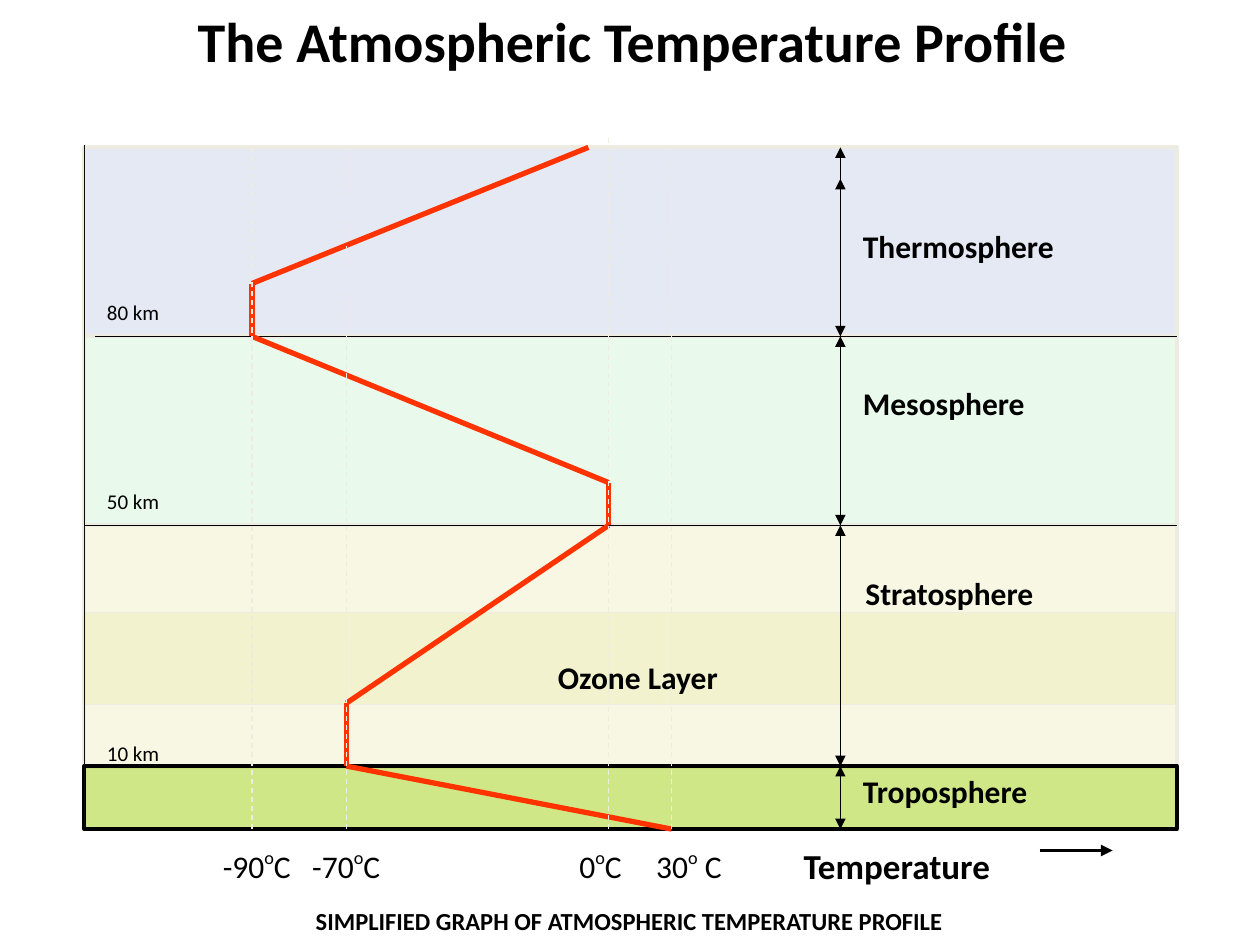
from itertools import pairwise

from lxml.etree import SubElement
from pptx import Presentation
from pptx.dml.color import RGBColor
from pptx.enum.dml import MSO_LINE
from pptx.enum.shapes import MSO_CONNECTOR, MSO_SHAPE
from pptx.enum.text import MSO_ANCHOR, PP_ALIGN
from pptx.oxml.ns import qn
from pptx.util import Inches, Pt

COLORS = {
    "black": "000000", "axis": "0D0D0D", "pale": "EEECE1", "red": "FF3300",
    "blue": "BBC7E3", "yellow": "D8D866", "mint": "B2ECB9", "green": "99CC00",
}
LEFT, RIGHT, TOP, GROUND = 0.67, 9.34, 1.17, 6.58
ARROW_X = 6.67
BOUNDARIES = [TOP, 2.67, 4.17, 6.08, GROUND]
BANDS = [
    (1.17, 1.5, "blue", 38, "pale", 2.25),
    (4.17, 1.92, "yellow", 18, "pale", 2.25),
    (2.67, 1.5, "mint", 28, "pale", 2.25),
    (6.08, 0.5, "green", 47, "black", 2.25),
    (4.86, 0.73, "yellow", 16, "pale", 0.75),
]
PROFILE = [(5.33, 6.58), (2.75, 6.08), (2.75, 5.58), (4.83, 4.17),
           (4.83, 3.83), (2, 2.67), (2, 2.25), (4.67, 1.17)]
GUIDES = [(2, TOP), (2.75, TOP), (4.83, 1.08), (5.33, TOP)]
LABELS = [
    ("Troposphere", 6.75, 6.08, 2.08),
    ("Stratosphere", 6.77, 4.51, 2.17),
    ("Mesosphere", 6.75, 3, 1.75),
    ("Thermosphere", 6.75, 1.75, 2.08),
    ("Ozone Layer", 4.33, 5.17, 2.33),
]
ALTITUDES = [("10 km", 5.83), ("50 km", 3.83), ("80 km", 2.33)]
TEMPERATURES = [("-90", "C", 1), ("-70", "C", 1.71), ("0", "C", 3.83), ("30", " C", 4.44)]


def rgb(name):
    """Return the named colour."""
    return RGBColor.from_string(COLORS[name])


def set_font(p, size, bold):
    """Format a whole paragraph."""
    p.font.name = "Calibri"
    p.font.size = Pt(size)
    p.font.bold = bold
    p.font.color.rgb = rgb("black")


def add_title(s, text):
    """Place and format the title placeholder."""
    sp = s.shapes.title
    sp.left, sp.top, sp.width, sp.height = map(Inches, (0.52, -0.02, 9, 0.68))
    tf = sp.text_frame
    tf.text = text
    tf.vertical_anchor = MSO_ANCHOR.MIDDLE
    tf.paragraphs[0].alignment = PP_ALIGN.CENTER
    set_font(tf.paragraphs[0], 32, True)


def add_band(s, top, height, fill, alpha, line, width):
    """Add a translucent band across the graph."""
    sp = s.shapes.add_shape(MSO_SHAPE.RECTANGLE, Inches(LEFT), Inches(top),
                            Inches(RIGHT - LEFT), Inches(height))
    sp.shadow.inherit = False
    sp.fill.solid()
    sp.fill.fore_color.rgb = rgb(fill)
    color = sp.fill._xPr.find(qn("a:solidFill"))[0]
    SubElement(color, qn("a:alpha")).set("val", str(alpha * 1000))
    sp.line.color.rgb = rgb(line)
    sp.line.width = Pt(width)


def add_line(s, start, end, color="black", width=0.75, dash=None, heads=()):
    """Add a straight line with optional dash and arrowheads."""
    sp = s.shapes.add_connector(MSO_CONNECTOR.STRAIGHT, *map(Inches, (*start, *end)))
    sp.line.color.rgb = rgb(color)
    sp.line.width = Pt(width)
    if dash:
        sp.line.dash_style = dash
    for head in heads:
        SubElement(sp.line._get_or_add_ln(), qn(f"a:{head}")).set("type", "triangle")
    SubElement(sp._element.spPr, qn("a:effectLst"))


def add_text(s, text, left, top, width, height=0.4, size=18, bold=True, align=None):
    """Add a one-paragraph text box and return its paragraph."""
    sp = s.shapes.add_textbox(*map(Inches, (left, top, width, height)))
    tf = sp.text_frame
    tf.word_wrap = True
    p = tf.paragraphs[0]
    p.text = text
    p.alignment = align
    set_font(p, size, bold)
    return p


def add_temperature_scale(s):
    """Add the temperature values at tab stops."""
    p = add_text(s, "", LEFT, 6.67, RIGHT - LEFT, bold=False)
    tabs = SubElement(p._p.get_or_add_pPr(), qn("a:tabLst"))
    p._p.pPr.insert(0, tabs)
    for value, unit, position in TEMPERATURES:
        tab = SubElement(tabs, qn("a:tab"))
        tab.set("pos", str(Inches(position)))
        tab.set("algn", "l")
        for text, baseline in ((f"\t{value}", 0), ("o", 42000), (unit, 0)):
            r = p.add_run()
            r.text = text
            if baseline:
                r._r.get_or_add_rPr().set("baseline", str(baseline))


def main():
    """Build the slide."""
    prs = Presentation()
    prs.slide_width, prs.slide_height = Inches(10), Inches(7.5)
    s = prs.slides.add_slide(prs.slide_layouts[5])
    add_title(s, "The Atmospheric Temperature Profile")
    for band in BANDS:
        add_band(s, *band)
    add_line(s, (LEFT, 1.15), (LEFT, GROUND), "axis")
    for y in BOUNDARIES[1:]:
        add_line(s, (0.75 if y == 2.67 else LEFT, y), (RIGHT, y))
    for start, end in pairwise(PROFILE):
        add_line(s, start, end, "red", 3)
    for x, top in GUIDES:
        add_line(s, (x, GROUND), (x, top), "pale", dash=MSO_LINE.DASH)
    for top, bottom in pairwise(BOUNDARIES):
        add_line(s, (ARROW_X, top), (ARROW_X, bottom), heads=("headEnd", "tailEnd"))
    add_line(s, (ARROW_X, 2.67), (ARROW_X, 1.42), heads=("tailEnd",))
    for label in LABELS:
        add_text(s, *label)
    for text, top in ALTITUDES:
        add_text(s, text, 0.75, top, 0.92, 0.3, 12, False)
    add_temperature_scale(s)
    add_text(s, "Temperature", 6.28, 6.65, 2.42, 0.43, 20)
    add_line(s, (8.25, 6.75), (8.83, 6.75), width=2.25, heads=("tailEnd",))
    add_text(s, "SIMPLIFIED GRAPH OF ATMOSPHERIC TEMPERATURE PROFILE",
             0.7, 7.14, 8.59, 0.33, 14, align=PP_ALIGN.CENTER)
    prs.save("out.pptx")


if __name__ == "__main__":
    main()
